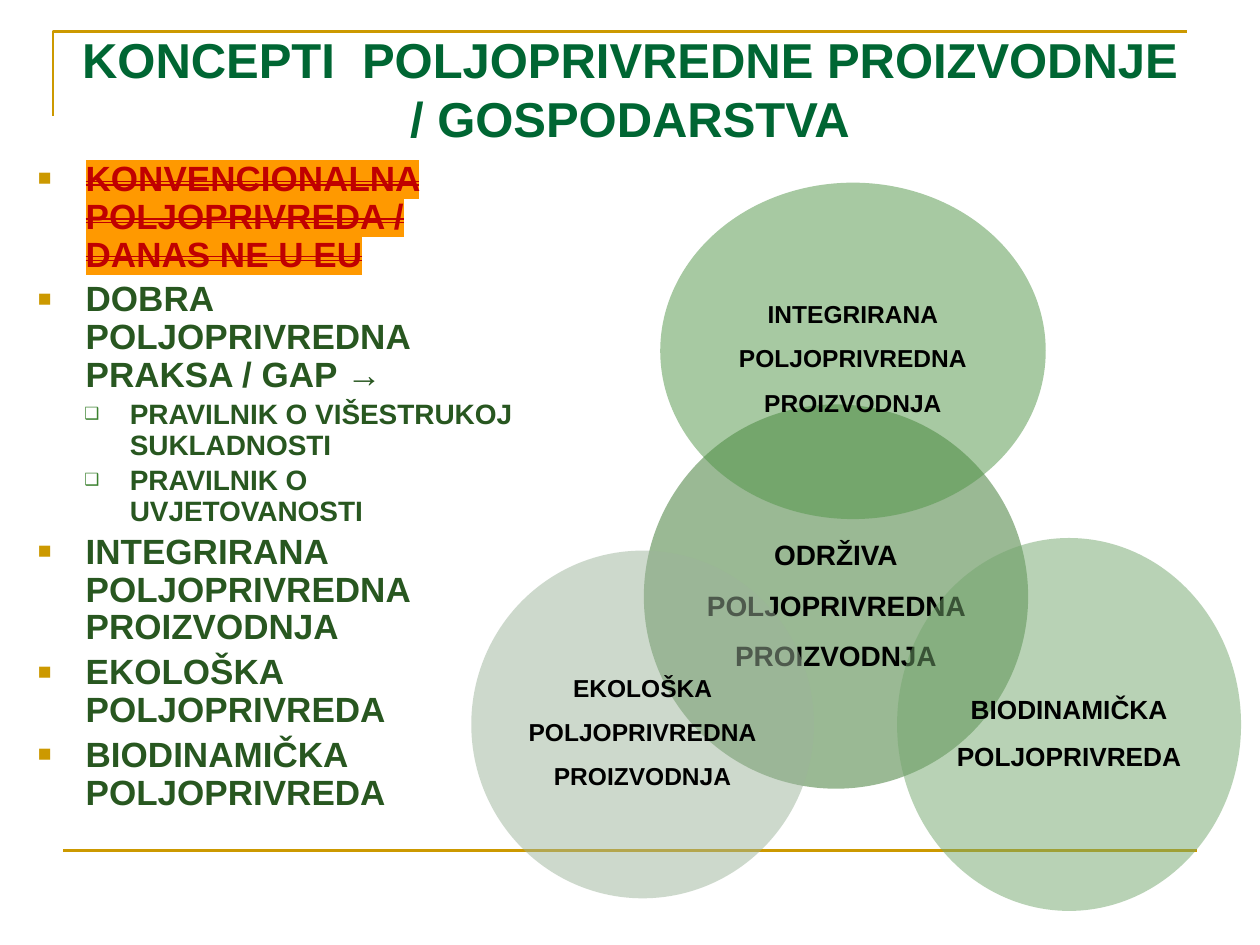
import pptx
import pptx.dml.color
import pptx.enum.shapes
import pptx.enum.text
import pptx.oxml.ns
import pptx.util
from lxml import etree
from pptx.util import Inches

FONT = "Arial"
GOLD = "CC9900"
GREEN = "285720"

# Per level: indent, hanging, text size, bullet, bullet colour, bullet percent
LEVELS = [
    (0.38, 0.38, 20, "■", GOLD, 65),
    (0.73, 0.36, 16, "❑", "3B812F", 60),
]
ITEMS = [
    (0, "KONVENCIONALNA POLJOPRIVREDA / DANAS NE U EU"),
    (0, "DOBRA POLJOPRIVREDNA PRAKSA / GAP →"),
    (1, "PRAVILNIK O VIŠESTRUKOJ SUKLADNOSTI"),
    (1, "PRAVILNIK O UVJETOVANOSTI"),
    (0, "INTEGRIRANA POLJOPRIVREDNA PROIZVODNJA"),
    (0, "EKOLOŠKA POLJOPRIVREDA"),
    (0, "BIODINAMIČKA POLJOPRIVREDA"),
]
# Left, top, width, height, fill, text size, lines
CIRCLES = [
    (5.11, 3.21, 3.05, 3.05, "36752B", 16,
     ["ODRŽIVA", "POLJOPRIVREDNA PROIZVODNJA"]),
    (5.24, 1.45, 3.06, 2.67, "509446", 14,
     ["INTEGRIRANA", "POLJOPRIVREDNA", "PROIZVODNJA"]),
    (7.12, 4.27, 2.73, 2.96, "73A76D", 15,
     ["BIODINAMIČKA", "POLJOPRIVREDA"]),
    (3.74, 4.37, 2.72, 2.76, "9DB49B", 14,
     ["EKOLOŠKA", "POLJOPRIVREDNA", "PROIZVODNJA"]),
]


def paint(target, color):
    target.rgb = pptx.dml.color.RGBColor.from_string(color)


def add_tag(parent, tag, **attrs):
    node = etree.SubElement(parent, pptx.oxml.ns.qn(tag))
    for name, value in attrs.items():
        node.set(name, str(value))
    return node


def place(shape, left, top, width, height):
    shape.left, shape.top = Inches(left), Inches(top)
    shape.width, shape.height = Inches(width), Inches(height)


def set_font(par, size, color):
    par.font.name = FONT
    par.font.size = pptx.util.Pt(size)
    par.font.bold = True
    paint(par.font.color, color)


def set_line(shape):
    shape.line.width = pptx.util.Pt(1.5)
    shape.line.fill.solid()
    paint(shape.line.color, GOLD)


def add_frame(shapes):
    """Draw the corner at the top left and the rule at the foot."""
    path = shapes.build_freeform(Inches(0.42), Inches(0.92))
    path.add_line_segments(
        [(Inches(0.42), Inches(0.25)), (Inches(9.42), Inches(0.25))], close=False)
    corner = path.convert_to_shape()
    corner.fill.background()
    corner.shadow.inherit = False
    set_line(corner)

    rule = shapes.add_connector(
        pptx.enum.shapes.MSO_CONNECTOR.STRAIGHT,
        Inches(0.5), Inches(6.75), Inches(9.5), Inches(6.75))
    set_line(rule)
    add_tag(rule._element.spPr, "a:effectLst")


def fill_title(title):
    place(title, 0.5, 0.17, 9, 1.06)
    frame = title.text_frame
    frame.text = "KONCEPTI  POLJOPRIVREDNE PROIZVODNJE / GOSPODARSTVA"
    frame.auto_size = pptx.enum.text.MSO_AUTO_SIZE.NONE
    frame.vertical_anchor = pptx.enum.text.MSO_ANCHOR.MIDDLE
    par = frame.paragraphs[0]
    par.alignment = pptx.enum.text.PP_ALIGN.CENTER
    set_font(par, 28, "006633")


def set_bullet(par, level):
    indent, hang, size, mark, color, scale = LEVELS[level]
    par.level = level
    par.line_spacing = 0.9
    par.space_before = pptx.util.Pt(0.2 * size)
    props = par._p.get_or_add_pPr()
    props.set("marL", str(Inches(indent)))
    props.set("indent", str(-Inches(hang)))
    add_tag(add_tag(props, "a:buClr"), "a:srgbClr", val=color)
    add_tag(props, "a:buSzPct", val=scale * 1000)
    add_tag(props, "a:buFont", typeface=FONT)
    add_tag(props, "a:buChar", char=mark)
    set_font(par, size, GREEN)


def strike_out(run):
    """Strike the run twice, in red on orange."""
    paint(run.font.color, "C00000")
    props = run.font._element
    props.set("strike", "dblStrike")
    add_tag(add_tag(props, "a:highlight"), "a:srgbClr", val="FF9900")


def fill_list(body):
    place(body, 0.2, 1.23, 4.02, 5.47)
    frame = body.text_frame
    frame.text = "\n".join(text for _, text in ITEMS)
    frame.auto_size = pptx.enum.text.MSO_AUTO_SIZE.NONE
    for par, (level, _) in zip(frame.paragraphs, ITEMS):
        set_bullet(par, level)
    first = frame.paragraphs[0]
    first.space_before = pptx.util.Pt(0)
    strike_out(first.runs[0])


def add_circle(shapes, left, top, width, height, color, size, lines):
    oval = shapes.add_shape(
        pptx.enum.shapes.MSO_SHAPE.OVAL,
        Inches(left), Inches(top), Inches(width), Inches(height))
    oval.shadow.inherit = False
    oval.line.fill.background()
    oval.fill.solid()
    paint(oval.fill.fore_color, color)
    tint = oval._element.spPr.find(".//" + pptx.oxml.ns.qn("a:srgbClr"))
    add_tag(tint, "a:alpha", val=50000)

    frame = oval.text_frame
    frame.text = "\n".join(lines)
    frame.word_wrap = True
    frame.vertical_anchor = pptx.enum.text.MSO_ANCHOR.MIDDLE
    frame.margin_left = frame.margin_right = Inches(0.02)
    frame.margin_top = frame.margin_bottom = Inches(0.02)
    for par in frame.paragraphs:
        par.alignment = pptx.enum.text.PP_ALIGN.CENTER
        par.line_spacing = 1.5
        set_font(par, size, "000000")


def main():
    deck = pptx.Presentation()
    deck.slide_width, deck.slide_height = Inches(10), Inches(7.5)
    slide = deck.slides.add_slide(deck.slide_layouts[1])
    add_frame(slide.shapes)
    fill_title(slide.shapes.title)
    fill_list(slide.placeholders[1])
    for circle in CIRCLES:
        add_circle(slide.shapes, *circle)
    deck.save("out.pptx")


if __name__ == "__main__":
    main()
